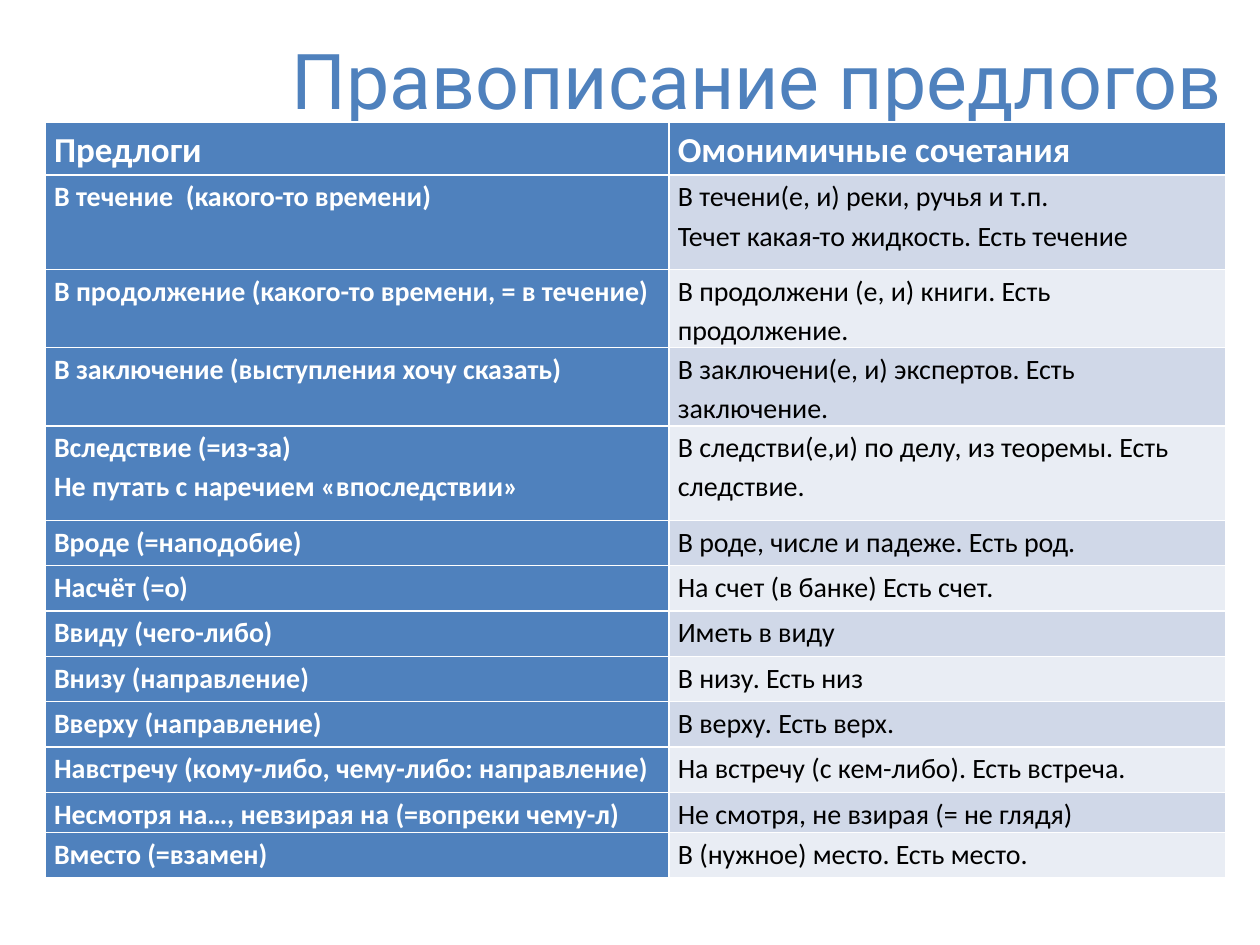
from pptx import Presentation
from pptx.dml.color import RGBColor
from pptx.enum.text import MSO_ANCHOR, PP_ALIGN
from pptx.util import Inches, Pt

MIDDLE, TOP = MSO_ANCHOR.MIDDLE, MSO_ANCHOR.TOP
LEFT, CENTER = PP_ALIGN.LEFT, PP_ALIGN.CENTER
BLUE, WHITE, BLACK = "4F81BD", "FFFFFF", "000000"
BANDS = ["D0D8E8", "E9EDF4"]


def color(code):
    return RGBColor.from_string(code)


def write(frame, text, size=16, font="Calibri", fill=BLACK, bold=False,
          align=LEFT, space=1.0):
    for i, line in enumerate(text.split("\n")):
        para = frame.paragraphs[0] if i == 0 else frame.add_paragraph()
        para.alignment = align
        para.line_spacing = space
        run = para.add_run()
        run.text = line
        run.font.size = Pt(size)
        run.font.name = font
        run.font.bold = bold
        run.font.color.rgb = color(fill)


deck = Presentation()
deck.slide_width, deck.slide_height = Inches(10), Inches(7.5)
slide = deck.slides.add_slide(deck.slide_layouts[6])

# Title
title = slide.shapes.add_textbox(Inches(1.51), 0, Inches(9), Inches(1.25))
title.text_frame.word_wrap = True
title.text_frame.vertical_anchor = MIDDLE
write(title.text_frame, "Правописание предлогов", size=44, font="Roboto",
      fill=BLUE, align=CENTER)

# Row height, preposition, matching phrase
rows = [
    (0.42, "Предлоги", "Омонимичные сочетания"),
    (0.75, "В течение  (какого-то времени)",
     "В течени(е, и) реки, ручья и т.п.\nТечет какая-то жидкость. Есть течение"),
    (0.62, "В продолжение (какого-то времени, = в течение)",
     "В продолжени (е, и) книги. Есть продолжение."),
    (0.62, "В заключение (выступления хочу сказать)",
     "В заключени(е, и) экспертов. Есть заключение."),
    (0.75, "Вследствие (=из-за)\nНе путать с наречием «впоследствии»",
     "В следстви(е,и) по делу, из теоремы. Есть следствие."),
    (0.36, "Вроде (=наподобие)", "В роде, числе и падеже. Есть род."),
    (0.36, "Насчёт (=о)", "На счет (в банке) Есть счет."),
    (0.36, "Ввиду (чего-либо)", "Иметь в виду"),
    (0.36, "Внизу (направление)", "В низу. Есть низ"),
    (0.36, "Вверху (направление)", "В верху. Есть верх."),
    (0.36, "Навстречу (кому-либо, чему-либо: направление)",
     "На встречу (с кем-либо). Есть встреча."),
    (0.32, "Несмотря на…, невзирая на (=вопреки чему-л)",
     "Не смотря, не взирая (= не глядя)"),
    (0.36, "Вместо (=взамен)", "В (нужное) место. Есть место."),
]

# Table: the default style draws the white rules
widths = [4.95, 4.42]
height = sum(row[0] for row in rows)
table = slide.shapes.add_table(len(rows), 2, Inches(0.36), Inches(0.97),
                               Inches(sum(widths)), Inches(height)).table
table.first_col = True
for col, width in zip(table.columns, widths):
    col.width = Inches(width)

for r, (tall, *texts) in enumerate(rows):
    table.rows[r].height = Inches(tall)
    for c, text in enumerate(texts):
        cell = table.cell(r, c)
        head = r == 0 or c == 0
        cell.margin_left = cell.margin_right = Inches(0.07)
        cell.margin_top = cell.margin_bottom = 0
        cell.vertical_anchor = TOP
        cell.fill.solid()
        cell.fill.fore_color.rgb = color(BLUE if head else BANDS[(r - 1) % 2])
        write(cell.text_frame, text, size=20 if r == 0 else 16, bold=head,
              fill=WHITE if head else BLACK, space=1.15)

deck.save("out.pptx")
